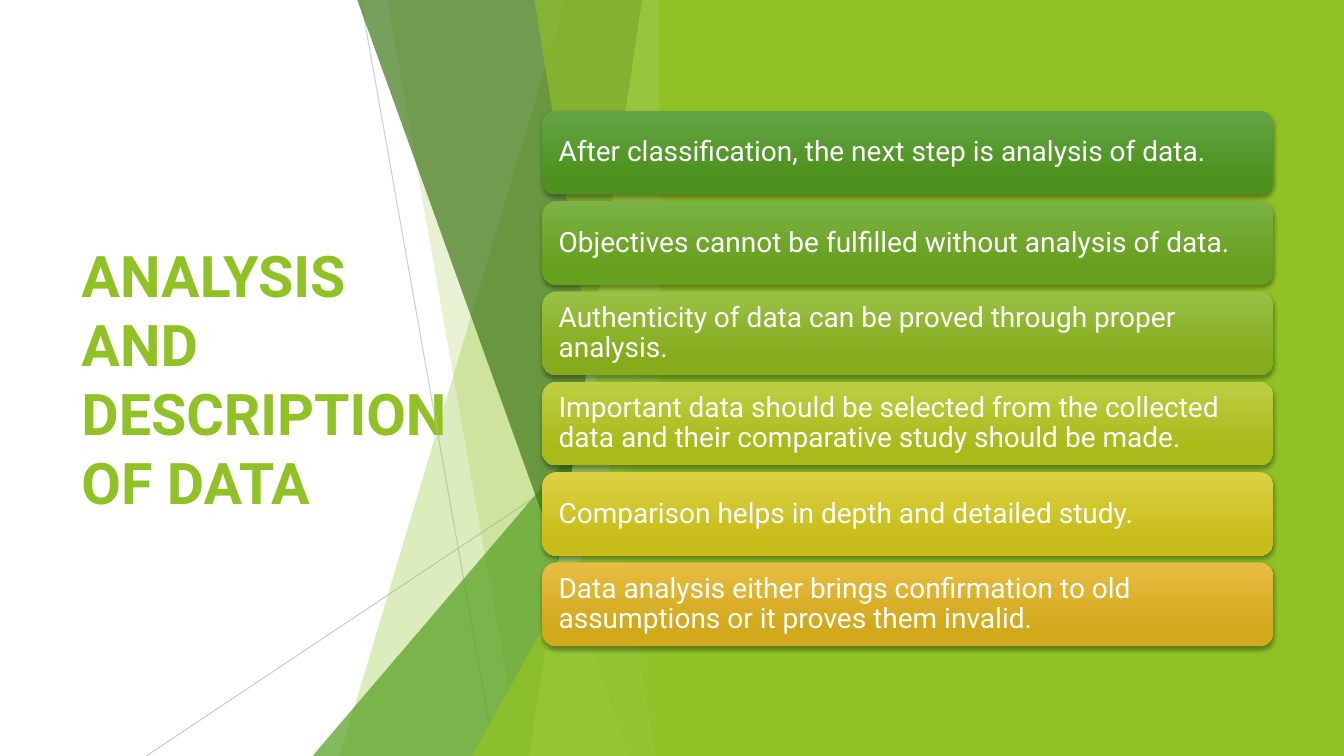
from dataclasses import dataclass

from lxml import etree
from pptx import Presentation
from pptx.dml.color import RGBColor
from pptx.enum.shapes import MSO_CONNECTOR, MSO_SHAPE
from pptx.enum.text import MSO_ANCHOR, PP_ALIGN
from pptx.oxml.ns import qn
from pptx.shapes.autoshape import Shape
from pptx.slide import Slide
from pptx.text.text import TextFrame
from pptx.util import Inches, Pt

LINE = MSO_CONNECTOR.STRAIGHT
RECT = MSO_SHAPE.RECTANGLE
ROUND = MSO_SHAPE.ROUNDED_RECTANGLE
TRIANGLE = MSO_SHAPE.ISOSCELES_TRIANGLE
MIDDLE = MSO_ANCHOR.MIDDLE
LEFT = PP_ALIGN.LEFT


@dataclass(frozen=True)
class Theme:
    font: str = "Roboto"
    title: float = 41
    body: float = 20
    thin: float = 0.75
    lime: str = "90C226"
    green: str = "54A021"
    forest: str = "3F7819"
    pale: str = "C0E474"
    gray: str = "BFBFBF"
    white: str = "FFFFFF"
    black: str = "000000"


@dataclass(frozen=True)
class Ray:
    start: tuple[float, float]
    end: tuple[float, float]
    alpha: int


@dataclass(frozen=True)
class Band:
    top: float
    foot: float
    color: str
    alpha: int


@dataclass(frozen=True)
class Wedge:
    left: float
    top: float
    color: str
    alpha: int


@dataclass(frozen=True)
class Card:
    text: str
    light: str
    dark: str


THEME = Theme()
WIDTH, HEIGHT = 13.33, 7.5
EDGE = 6.66  # right side shared by all facets
RISE = -0.01  # bands start just above the slide

RAYS = [
    Ray((3.58, 0), (4.91, HEIGHT), 75),
    Ray((EDGE, 4.03), (1.45, HEIGHT), 80),
]
FACETS = [
    Band(5.61, 3.37, THEME.lime, 30),
    Band(3.84, 5.16, THEME.lime, 20),
    Wedge(3.1, 3.33, THEME.green, 72),
    Band(3.54, 6.24, THEME.forest, 70),
    Band(6.37, 5.25, THEME.pale, 70),
    Band(5.3, 6.51, THEME.lime, 65),
    Wedge(4.68, 3.93, THEME.lime, 80),
]
CARDS = [
    Card("After classification, the next step is analysis of data.", "63A545", "4D921E"),
    Card("Objectives cannot be fulfilled without analysis of data.", "7BB244", "679F1E"),
    Card("Authenticity of data can be proved through proper analysis.", "99C044", "86AC1D"),
    Card("Important data should be selected from the collected data "
         "and their comparative study should be made.", "BDCE43", "A9BA1B"),
    Card("Comparison helps in depth and detailed study.", "DCD143", "C8BD1A"),
    Card("Data analysis either brings confirmation to old assumptions "
         "or it proves them invalid.", "E7BC43", "D2A91B"),
]
CARD_TOP, CARD_STEP = 1.1, 0.896


def fade(fill, alpha: int) -> None:
    """Give a solid fill element an opacity in percent."""
    etree.SubElement(fill[0], qn("a:alpha")).set("val", str(alpha * 1000))


def paint(shape: Shape, color: str, alpha: int = 100) -> None:
    shape.shadow.inherit = False
    shape.fill.solid()
    shape.fill.fore_color.rgb = RGBColor.from_string(color)
    shape.line.fill.background()
    if alpha < 100:
        fade(shape.element.spPr.find(qn("a:solidFill")), alpha)


def draw_ray(slide: Slide, ray: Ray) -> None:
    line = slide.shapes.add_connector(LINE, *map(Inches, ray.start + ray.end))
    line.line.color.rgb = RGBColor.from_string(THEME.gray)
    line.line.width = Pt(THEME.thin)
    props = line.element.spPr
    fade(props.find(qn("a:ln")).find(qn("a:solidFill")), ray.alpha)
    etree.SubElement(props, qn("a:effectLst"))


def draw_band(slide: Slide, band: Band) -> None:
    form = slide.shapes.build_freeform(Inches(band.top), Inches(RISE))
    ends = [(EDGE, RISE), (EDGE, HEIGHT), (band.foot, HEIGHT)]
    form.add_line_segments([(Inches(x), Inches(y)) for x, y in ends])
    paint(form.convert_to_shape(), band.color, band.alpha)


def draw_wedge(slide: Slide, wedge: Wedge) -> None:
    shape = slide.shapes.add_shape(
        TRIANGLE, Inches(wedge.left), Inches(wedge.top),
        Inches(EDGE - wedge.left), Inches(HEIGHT - wedge.top))
    shape.adjustments[0] = 1
    paint(shape, wedge.color, wedge.alpha)


def write(frame: TextFrame, text: str, size: float, color: str, bold: bool = False) -> None:
    frame.text = text
    frame.word_wrap = True
    frame.vertical_anchor = MIDDLE
    frame.paragraphs[0].alignment = LEFT
    font = frame.paragraphs[0].runs[0].font
    font.name = THEME.font
    font.size = Pt(size)
    font.bold = bold
    font.color.rgb = RGBColor.from_string(color)


def cast(shape: Shape) -> None:
    """Add a soft shadow that falls straight down."""
    shape.shadow.inherit = False
    shade = etree.SubElement(
        shape.element.spPr.find(qn("a:effectLst")), qn("a:outerShdw"),
        blurRad=str(Pt(3)), dist=str(Pt(2)), dir="5400000", rotWithShape="0")
    color = etree.SubElement(shade, qn("a:srgbClr"), val=THEME.black)
    etree.SubElement(color, qn("a:alpha"), val="35000")


def draw_card(slide: Slide, card: Card, top: float) -> None:
    shape = slide.shapes.add_shape(
        ROUND, Inches(5.38), Inches(top), Inches(7.25), Inches(0.83))
    shape.line.fill.background()
    shape.fill.gradient()
    shape.fill.gradient_angle = 270
    tones = [(0, card.light), (0.78, card.dark)]
    for stop, (place, color) in zip(shape.fill.gradient_stops, tones):
        stop.position = place
        stop.color.rgb = RGBColor.from_string(color)
    cast(shape)
    frame = shape.text_frame
    write(frame, card.text, THEME.body, THEME.white)
    frame.margin_left = frame.margin_right = Inches(0.12)
    frame.paragraphs[0].line_spacing = 0.9


def main() -> None:
    deck = Presentation()
    deck.slide_width, deck.slide_height = Inches(WIDTH), Inches(HEIGHT)
    slide = deck.slides.add_slide(deck.slide_layouts[6])

    title = slide.shapes.add_textbox(Inches(0.71), Inches(1.51), Inches(3.88), Inches(4.48))
    write(title.text_frame, "ANALYSIS AND DESCRIPTION OF DATA",
          THEME.title, THEME.lime, bold=True)

    for ray in RAYS:
        draw_ray(slide, ray)
    for facet in FACETS:
        if isinstance(facet, Band):
            draw_band(slide, facet)
        else:
            draw_wedge(slide, facet)

    panel = slide.shapes.add_shape(
        RECT, Inches(6.54), 0, Inches(WIDTH - 6.54), Inches(HEIGHT))
    paint(panel, THEME.lime)
    for row, card in enumerate(CARDS):
        draw_card(slide, card, CARD_TOP + row * CARD_STEP)

    deck.save("out.pptx")


if __name__ == "__main__":
    main()
